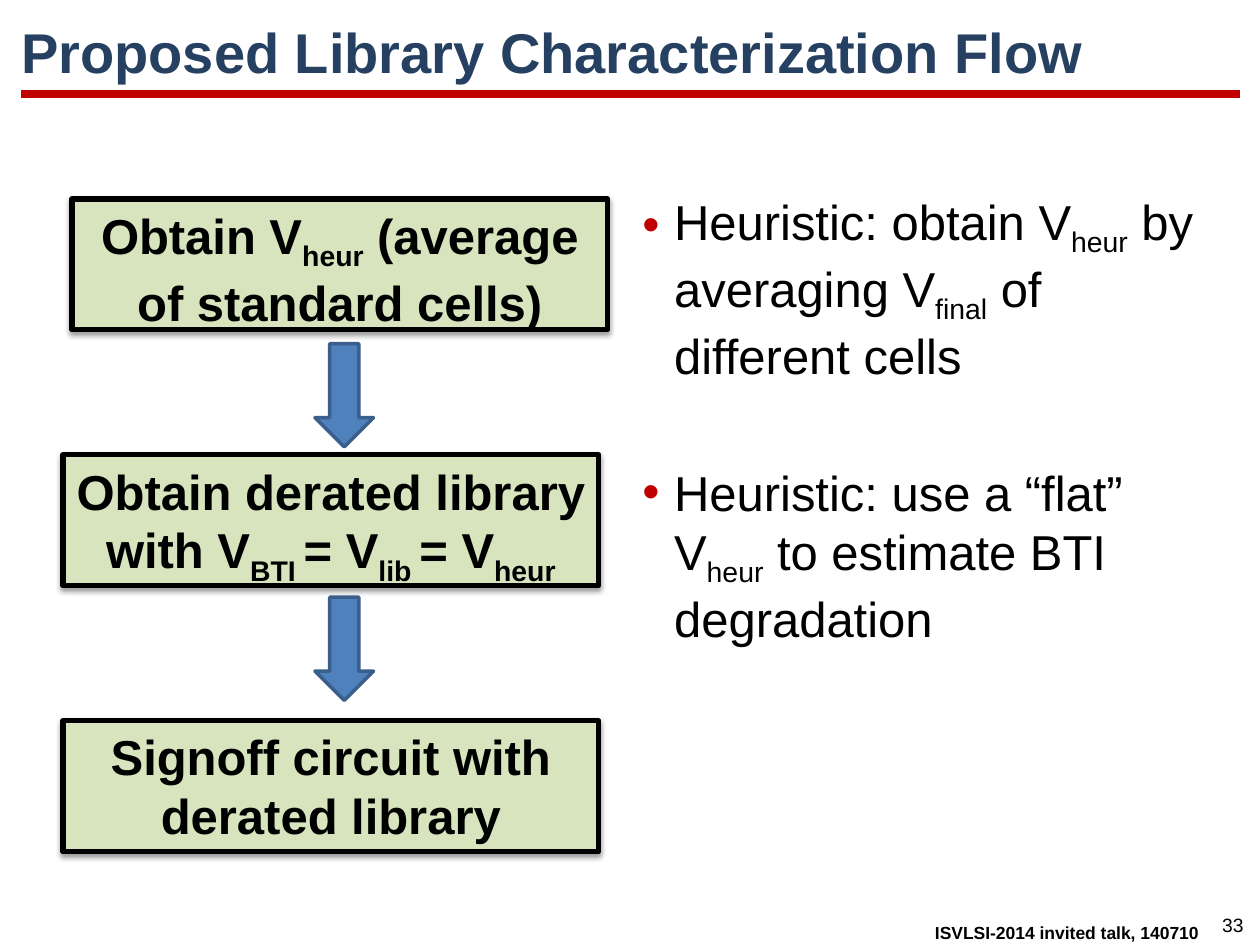
from dataclasses import dataclass

from lxml import etree
from pptx import Presentation
from pptx.dml.color import RGBColor
from pptx.enum.shapes import MSO_CONNECTOR, MSO_SHAPE
from pptx.enum.text import MSO_ANCHOR, PP_ALIGN
from pptx.oxml.ns import qn
from pptx.shapes.autoshape import Shape
from pptx.slide import Slide
from pptx.text.text import _Paragraph
from pptx.util import Cm, Pt

RECTANGLE = MSO_SHAPE.RECTANGLE
DOWN_ARROW = MSO_SHAPE.DOWN_ARROW
STRAIGHT = MSO_CONNECTOR.STRAIGHT
LEFT, CENTER, RIGHT = PP_ALIGN.LEFT, PP_ALIGN.CENTER, PP_ALIGN.RIGHT
TOP, MIDDLE = MSO_ANCHOR.TOP, MSO_ANCHOR.MIDDLE

FONT = "Arial"
COLORS = {
    "text": "000000",
    "title": "254061",
    "accent": "C00000",
    "step": "D7E4BD",
    "arrow": "4F81BD",
    "arrow_line": "3A5F8C",
}


@dataclass
class Box:
    left: float
    top: float
    width: float
    height: float


@dataclass
class TextStyle:
    size: float
    bold: bool = False
    color: str = "text"
    alignment: PP_ALIGN = LEFT


@dataclass
class Piece:
    text: str
    subscript: bool = False


@dataclass
class Step:
    left: float
    top: float
    pieces: list[Piece]


@dataclass
class Label:
    box: Box
    text: str
    style: TextStyle
    anchor: MSO_ANCHOR = TOP
    wrap: bool = True


STEP_WIDTH, STEP_HEIGHT = 10.8, 2.64
ARROW_LEFT, ARROW_WIDTH, ARROW_HEIGHT = 6.35, 1.18, 2.08
ARROW_TOPS = [6.93, 12.04]
STEP_STYLE = TextStyle(28, bold=True, alignment=CENTER)
BULLET_STYLE = TextStyle(28)
BULLET_BOX = Box(12.7, 3.73, 12.19, 9.19)
BULLET_INDENT = 0.64
BULLET_GAP = 45

LABELS = [
    Label(Box(24.36, 18.29, 0.99, 0.74), "33", TextStyle(11, alignment=CENTER), wrap=False),
    Label(Box(17.6, 18.47, 6.81, 0.69), "ISVLSI-2014 invited talk, 140710",
          TextStyle(10, bold=True, alignment=RIGHT)),
    Label(Box(0.18, 0.25, 25.2, 1.57), "Proposed Library Characterization Flow",
          TextStyle(32, bold=True, color="title"), anchor=MIDDLE),
]

HEURISTIC_VOLTAGE = Piece("heur", subscript=True)
STEPS = [
    Step(1.45, 4.01, [Piece("Obtain V"), HEURISTIC_VOLTAGE, Piece(" (average of standard cells)")]),
    Step(1.27, 9.17, [Piece("Obtain derated library with V"), Piece("BTI ", subscript=True),
                      Piece("= V"), Piece("lib ", subscript=True), Piece("= V"), HEURISTIC_VOLTAGE]),
    Step(1.27, 14.53, [Piece("Signoff circuit with derated library")]),
]
BULLETS = [
    [Piece("Heuristic: obtain V"), HEURISTIC_VOLTAGE, Piece(" by averaging V"),
     Piece("final", subscript=True), Piece(" of different cells")],
    [Piece("Heuristic: use a “flat” V"), HEURISTIC_VOLTAGE, Piece(" to estimate BTI degradation")],
]


def rgb(name: str) -> RGBColor:
    return RGBColor.from_string(COLORS[name])


def write_paragraph(paragraph: _Paragraph, pieces: list[Piece], style: TextStyle) -> None:
    paragraph.alignment = style.alignment
    for piece in pieces:
        run = paragraph.add_run()
        run.text = piece.text
        run.font.name = FONT
        run.font.size = Pt(style.size)
        run.font.bold = style.bold
        run.font.color.rgb = rgb(style.color)
        if piece.subscript:
            run._r.get_or_add_rPr().set("baseline", "-25000")


def add_text_box(slide: Slide, box: Box, anchor: MSO_ANCHOR = TOP, wrap: bool = True) -> Shape:
    shape = slide.shapes.add_textbox(Cm(box.left), Cm(box.top), Cm(box.width), Cm(box.height))
    shape.text_frame.word_wrap = wrap
    shape.text_frame.vertical_anchor = anchor
    return shape


def add_filled_shape(slide: Slide, kind: MSO_SHAPE, box: Box, fill: str, line: str,
                     line_width: float) -> Shape:
    shape = slide.shapes.add_shape(kind, Cm(box.left), Cm(box.top), Cm(box.width), Cm(box.height))
    shape.shadow.inherit = False
    shape.fill.solid()
    shape.fill.fore_color.rgb = rgb(fill)
    shape.line.color.rgb = rgb(line)
    shape.line.width = Pt(line_width)
    return shape


def add_drop_shadow(shape: Shape) -> None:
    effects = shape._element.spPr.find(qn("a:effectLst"))
    shadow = etree.SubElement(effects, qn("a:outerShdw"), blurRad="40000", dist="20000",
                              dir="5400000", rotWithShape="0")
    color = etree.SubElement(shadow, qn("a:srgbClr"), val=COLORS["text"])
    etree.SubElement(color, qn("a:alpha"), val="38000")


def add_step(slide: Slide, step: Step) -> None:
    box = Box(step.left, step.top, STEP_WIDTH, STEP_HEIGHT)
    shape = add_filled_shape(slide, RECTANGLE, box, "step", "text", 3)
    add_drop_shadow(shape)
    shape.text_frame.word_wrap = True
    shape.text_frame.vertical_anchor = TOP
    write_paragraph(shape.text_frame.paragraphs[0], step.pieces, STEP_STYLE)


def add_bullet(paragraph: _Paragraph) -> None:
    properties = paragraph._p.get_or_add_pPr()
    properties.set("marL", str(Cm(BULLET_INDENT)))
    properties.set("indent", str(-Cm(BULLET_INDENT)))
    color = etree.SubElement(properties, qn("a:buClr"))
    etree.SubElement(color, qn("a:srgbClr"), val=COLORS["accent"])
    etree.SubElement(properties, qn("a:buFont"), typeface=FONT)
    etree.SubElement(properties, qn("a:buChar"), char="•")


def add_bullet_list(slide: Slide) -> None:
    text_frame = add_text_box(slide, BULLET_BOX).text_frame
    for index, pieces in enumerate(BULLETS):
        paragraph = text_frame.add_paragraph() if index else text_frame.paragraphs[0]
        add_bullet(paragraph)
        if index:
            paragraph.space_before = Pt(BULLET_GAP)
        write_paragraph(paragraph, pieces, BULLET_STYLE)


def add_title_rule(slide: Slide) -> None:
    rule = slide.shapes.add_connector(STRAIGHT, Cm(0.43), Cm(1.9), Cm(25), Cm(1.9))
    rule.line.color.rgb = rgb("accent")
    rule.line.width = Pt(4.5)
    etree.SubElement(rule._element.spPr, qn("a:effectLst"))


def main() -> None:
    presentation = Presentation()
    presentation.slide_width = Cm(25.4)
    presentation.slide_height = Cm(19.05)
    slide = presentation.slides.add_slide(presentation.slide_layouts[6])
    add_title_rule(slide)
    for label in LABELS:
        shape = add_text_box(slide, label.box, label.anchor, label.wrap)
        write_paragraph(shape.text_frame.paragraphs[0], [Piece(label.text)], label.style)
    add_bullet_list(slide)
    for step in STEPS:
        add_step(slide, step)
    for top in ARROW_TOPS:
        box = Box(ARROW_LEFT, top, ARROW_WIDTH, ARROW_HEIGHT)
        add_filled_shape(slide, DOWN_ARROW, box, "arrow", "arrow_line", 2)
    presentation.save("out.pptx")


if __name__ == "__main__":
    main()
